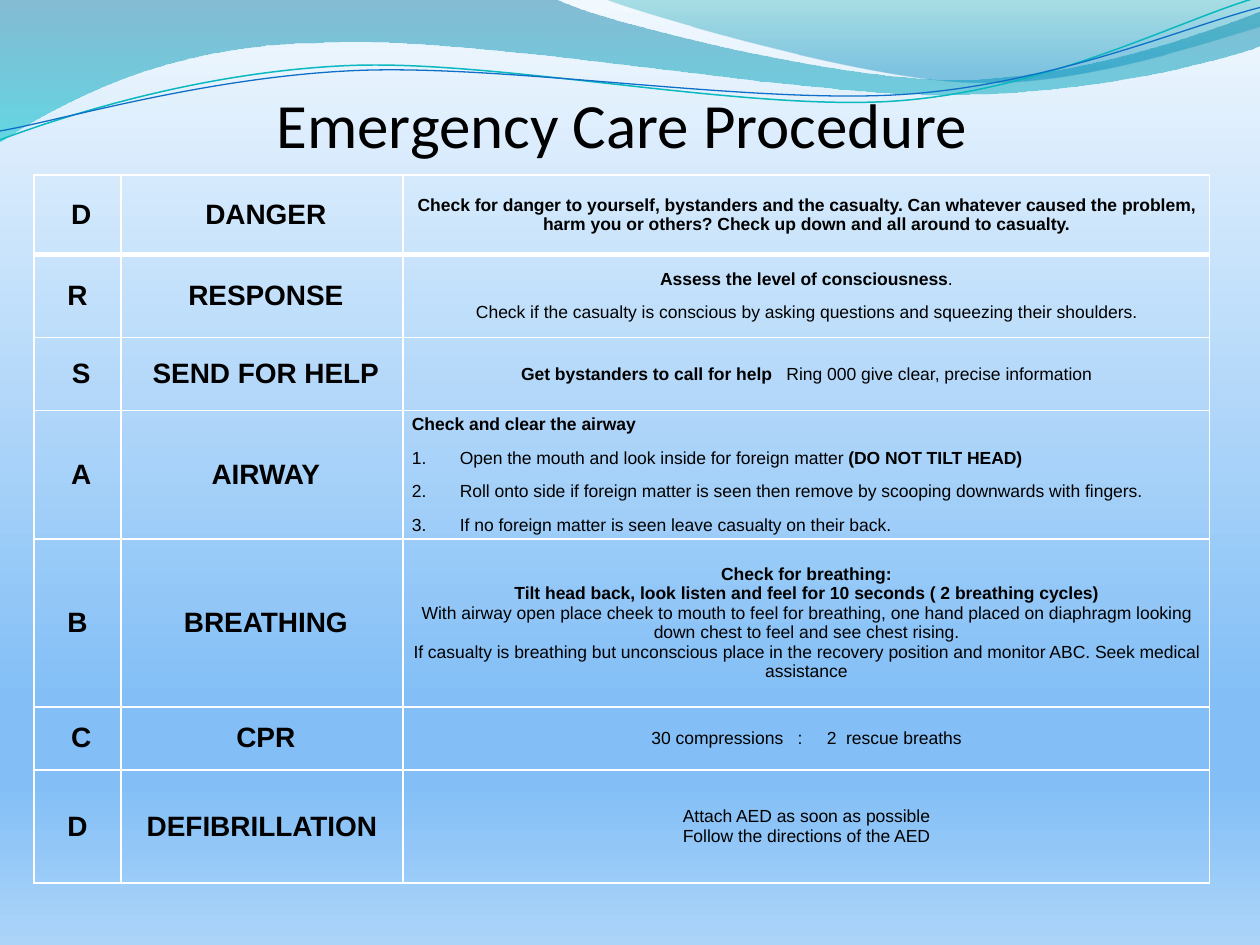
from collections import namedtuple
from dataclasses import dataclass
from math import cos, radians, sin

from lxml import etree
from pptx import Presentation
from pptx.dml.color import RGBColor
from pptx.enum.text import MSO_ANCHOR, MSO_AUTO_SIZE, PP_ALIGN
from pptx.oxml.ns import qn
from pptx.util import Inches, Pt

CENTER, LEFT = PP_ALIGN.CENTER, PP_ALIGN.LEFT
MIDDLE, BOTTOM = MSO_ANCHOR.MIDDLE, MSO_ANCHOR.BOTTOM
NO_FIT = MSO_AUTO_SIZE.NONE

Box = namedtuple("Box", "left top width height")
Wave = namedtuple("Wave", "start segments stops")
Ribbon = namedtuple("Ribbon", "start segments pivot color weight")
Step = namedtuple("Step", "letter name height gap lines nudges")


@dataclass(frozen=True)
class Theme:
    ink: str = "000000"
    border: str = "FFFFFF"
    title_font: str = "Calibri"
    body_font: str = "Arial"
    title_size: float = 36
    label_size: float = 16
    text_size: float = 10
    # gradient stops: position, colour, opacity, all in percent but the colour
    sky: tuple = ((0, "F1F8FE", 100), (74, "83BFF6", 100),
                  (83, "83BFF6", 100), (100, "ACD4F9", 100))
    deep_wave: tuple = ((0, "0074A1", 45), (100, "00C6CF", 55))
    light_wave: tuple = ((0, "00A1A9", 30), (80, "008BBF", 45))
    teal: str = "0AB8BF"
    blue: str = "0F6FC6"


THEME = Theme()
RIBBON_TILT = -2.7

# A segment of two numbers is a straight line, one of six a Bezier curve.
WAVES = [
    Wave((0, -0.01), [(4.4, -0.01), (4.76, 0.17, 6.64, 0.63, 7.58, 0.63),
                      (8.53, 0.63, 9.58, 0.26, 10, 0.09), (10.01, 0.36),
                      (9.83, 0.44, 8.7, 0.76, 7.46, 0.75),
                      (6.22, 0.75, 3.82, 0.28, 2.57, 0.34),
                      (1.29, 0.35, 0.46, 0.83, -0.01, 1.13), (0, -0.01)], THEME.deep_wave),
    Wave((4.79, -0.01), [(5.09, 0.11, 6.82, 0.62, 7.69, 0.65),
                         (8.56, 0.69, 9.61, 0.32, 10, 0.21), (10, 0),
                         (4.79, -0.01)], THEME.light_wave),
]
RIBBONS = [
    Ribbon((0, 1.11), [(0.48, 0.93, 1.58, 0.57, 2.77, 0.52),
                       (3.95, 0.47, 5.93, 0.89, 7.13, 0.8),
                       (8.33, 0.71, 9.38, 0.15, 9.98, -0.02)],
           (4.99, 0.57), THEME.teal, 0.85),
    Ribbon((0, 1.04), [(0.47, 0.96, 1.64, 0.61, 2.83, 0.56),
                       (4.03, 0.51, 5.97, 0.83, 7.17, 0.75),
                       (8.36, 0.67, 9.41, 0.21, 10, 0.06)],
           (5, 0.59), THEME.blue, 0.75),
]

# Each line is a list of (text, bold); nudges shift the letter and the name right.
STEPS = [
    Step("D", "DANGER", 0.63, 8, [
        [("Check for danger to yourself, bystanders and the casualty. Can whatever caused "
          "the problem, harm you or others? Check up down and all around to casualty.", True)],
    ], (0.06, 0.06)),
    Step("R", "RESPONSE", 0.66, 8, [
        [("Assess the level of consciousness", True), (".", False)],
        [("Check if the casualty is conscious by asking questions and squeezing "
          "their shoulders.", False)],
    ], (0, 0.06)),
    Step("S", "SEND FOR HELP", 0.58, 8, [
        [("Get bystanders to call for help   ", True),
         ("Ring 000 give clear, precise information", False)],
    ], (0.06, 0.06)),
    Step("A", "AIRWAY", 1.02, 8, [
        [("Check and clear the airway", True)],
        [("Open the mouth and look inside for foreign matter ", False),
         ("(DO NOT TILT HEAD)", True)],
        [("Roll onto side if foreign matter is seen then remove by scooping downwards "
          "with fingers.", False)],
        [("If no foreign matter is seen leave casualty on their back.", False)],
    ], (0.06, 0.06)),
    Step("B", "BREATHING", 1.33, 0, [
        [("Check for breathing:", True)],
        [("Tilt head back, look listen and feel for 10 seconds ( 2 breathing cycles)", True)],
        [("With airway open place cheek to mouth to feel for breathing, one hand placed on "
          "diaphragm looking down chest to feel and see chest rising.", False)],
        [("If casualty is breathing but unconscious place in the recovery position and "
          "monitor ABC. Seek medical assistance", False)],
    ], (0, 0.06)),
    Step("C", "CPR", 0.5, 0, [
        [("30 compressions   :     2  rescue breaths", False)],
    ], (0.06, 0.06)),
    Step("D", "DEFIBRILLATION", 0.9, 0, [
        [("Attach AED as soon as possible", False)],
        [("Follow the directions of the AED", False)],
    ], (0, 0)),
]
NUMBERED_STEP = "AIRWAY"
COLUMN_WIDTHS = (0.69, 2.24, 6.4)


def apply(target, **values):
    for name, value in values.items():
        setattr(target, name, value)


def style_font(font, size, name=THEME.body_font, bold=False):
    apply(font, size=Pt(size), name=name, bold=bold)
    font.color.rgb = RGBColor.from_string(THEME.ink)


def add_color(parent, color, opacity=100):
    node = etree.SubElement(parent, qn("a:srgbClr"), val=color)
    if opacity < 100:
        etree.SubElement(node, qn("a:alpha"), val=str(opacity * 1000))


def paint_gradient(fill, holder, stops):
    """Fill from top to bottom; holder is the element that contains the fill."""
    fill.gradient()
    fill.gradient_angle = 270
    stop_list = next(holder.iter(qn("a:gsLst")))
    for old in list(stop_list):
        stop_list.remove(old)
    for position, color, opacity in stops:
        stop = etree.SubElement(stop_list, qn("a:gs"), pos=str(position * 1000))
        add_color(stop, color, opacity)


def bend_segments(shape, segments):
    """Turn each three lines that stand for a curve into one Bezier curve."""
    outline = next(shape.element.iter(qn("a:path")))
    lines = iter(outline.findall(qn("a:lnTo")))
    for segment in segments:
        group = [next(lines) for _ in range(len(segment) // 2)]
        if len(group) == 3:
            curve = etree.SubElement(outline, qn("a:cubicBezTo"))
            group[0].addprevious(curve)
            for line in group:
                curve.append(line[0])
                outline.remove(line)


def draw_outline(page, box, outline, close, pivot=(0, 0), tilt=0):
    """Draw the curve; a tilt is taken out of the points and set as rotation."""
    turn = radians(-tilt)

    def place(point):
        x, y = point[0] - pivot[0], point[1] - pivot[1]
        return (Inches(box.left + pivot[0] + x * cos(turn) - y * sin(turn)),
                Inches(box.top + pivot[1] + x * sin(turn) + y * cos(turn)))

    points = [place(segment[i:i + 2]) for segment in outline.segments
              for i in range(0, len(segment), 2)]
    builder = page.shapes.build_freeform(*place(outline.start))
    builder.add_line_segments(points, close=close)
    shape = builder.convert_to_shape()
    bend_segments(shape, outline.segments)
    shape.rotation = tilt
    shape.shadow.inherit = False
    return shape


def draw_header(page, box):
    for wave in WAVES:
        shape = draw_outline(page, box, wave, close=True)
        shape.line.fill.background()
        paint_gradient(shape.fill, shape.element, wave.stops)
    for ribbon in RIBBONS:
        shape = draw_outline(page, box, ribbon, False, ribbon.pivot, RIBBON_TILT)
        shape.fill.background()
        shape.line.color.rgb = RGBColor.from_string(ribbon.color)
        shape.line.width = Pt(ribbon.weight)


def place_title(page, box, text):
    title = page.shapes.title
    apply(title, **{side: Inches(value) for side, value in box._asdict().items()})
    frame = title.text_frame
    apply(frame, text=text, auto_size=NO_FIT, vertical_anchor=BOTTOM, margin_left=0,
          margin_right=0, margin_top=Inches(0.05), margin_bottom=0)
    para = frame.paragraphs[0]
    para.alignment = CENTER
    style_font(para.runs[0].font, THEME.title_size, THEME.title_font)
    title.element.getparent().append(title.element)  # in front of the waves


def add_borders(cell, top, bottom):
    properties = cell._tc.get_or_add_tcPr()
    for side, points in (("L", 1), ("R", 1), ("T", top), ("B", bottom)):
        line = etree.SubElement(properties, qn(f"a:ln{side}"), w=str(Pt(points)))
        add_color(etree.SubElement(line, qn("a:solidFill")), THEME.border)


def number_paragraph(para):
    properties = para._p.get_or_add_pPr()
    properties.set("marL", str(Inches(0.38)))
    properties.set("indent", str(-Inches(0.38)))
    etree.SubElement(properties, qn("a:buFont"), typeface="+mj-lt")
    etree.SubElement(properties, qn("a:buAutoNum"), type="arabicPeriod")


def fill_cell(cell, lines, size, gap=0, nudge=0, numbered=False):
    apply(cell, vertical_anchor=MIDDLE, margin_left=Inches(0.07 + nudge),
          margin_right=Inches(0.07), margin_top=0, margin_bottom=0)
    frame = cell.text_frame
    for index, line in enumerate(lines):
        para = frame.add_paragraph() if index else frame.paragraphs[0]
        apply(para, alignment=LEFT if numbered else CENTER, space_after=Pt(gap))
        if numbered and index:
            number_paragraph(para)
        for text, bold in line:
            span = para.add_run()
            span.text = text
            style_font(span.font, size, bold=bold)


def place_procedure(page, box):
    table = page.shapes.add_table(len(STEPS), len(COLUMN_WIDTHS), *map(Inches, box)).table
    apply(table, first_row=False, horz_banding=False)
    for column, width in zip(table.columns, COLUMN_WIDTHS):
        column.width = Inches(width)
    for index, (row, step) in enumerate(zip(table.rows, STEPS)):
        row.height = Inches(step.height)
        letter, name, details = row.cells
        for cell in row.cells:
            add_borders(cell, top=3 if index == 1 else 1, bottom=3 if index == 0 else 1)
            cell.fill.background()
        for cell, text, nudge in zip((letter, name), (step.letter, step.name), step.nudges):
            fill_cell(cell, [[(text, True)]], THEME.label_size, nudge=nudge)
        fill_cell(details, step.lines, THEME.text_size, step.gap,
                  numbered=step.name == NUMBERED_STEP)


def main():
    deck = Presentation()
    apply(deck, slide_width=Inches(10), slide_height=Inches(7.5))
    page = deck.slides.add_slide(deck.slide_layouts[5])
    paint_gradient(page.background.fill, page.element, THEME.sky)
    draw_header(page, Box(0, 0, 10, 1.13))
    place_title(page, Box(1.57, 0.68, 6.73, 0.6), "Emergency Care Procedure")
    place_procedure(page, Box(0.27, 1.39, 9.33, 5.62))
    deck.save("out.pptx")


if __name__ == "__main__":
    main()
